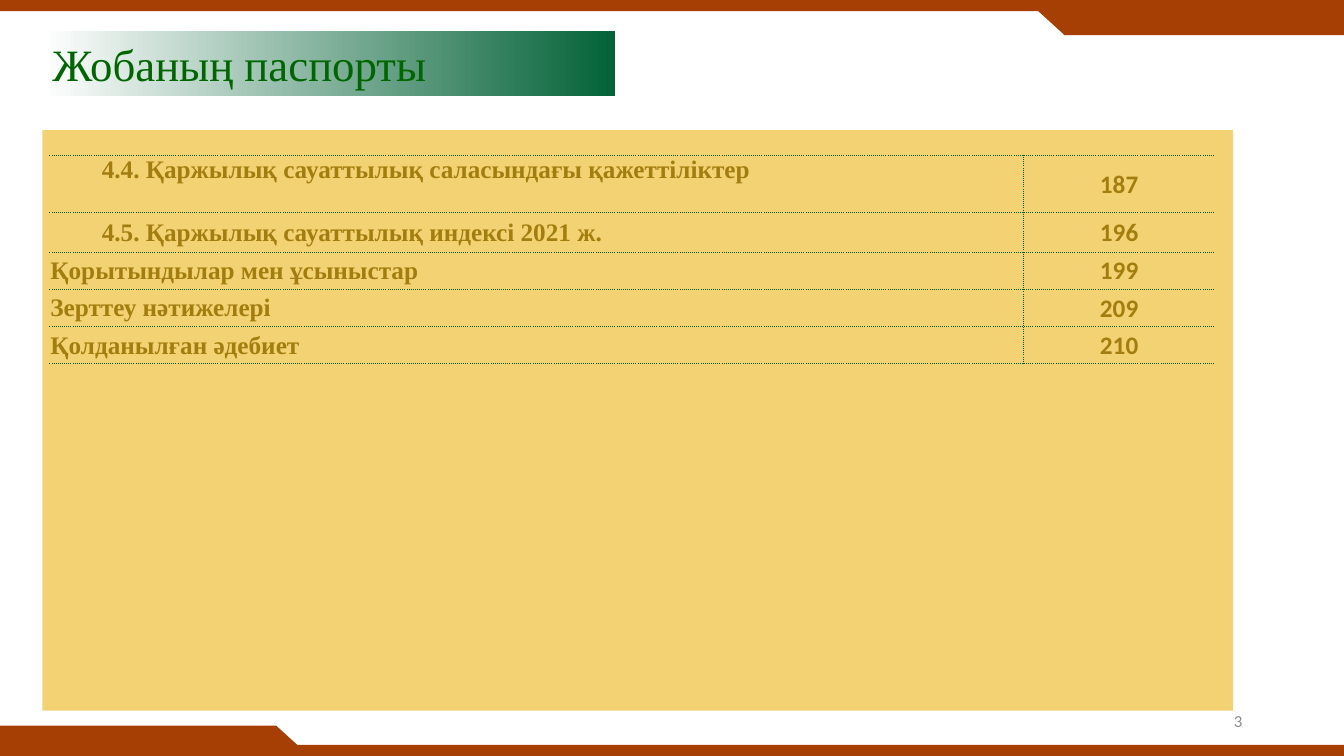
from typing import NamedTuple

from lxml import etree
from pptx import Presentation
from pptx import util as u
from pptx.dml import color
from pptx.enum import shapes, text
from pptx.oxml import ns

COLORS = {
    "rust": "A63F03",
    "sand": "F2D272",
    "ochre": "A37E0F",
    "pine": "036237",
    "rule": "026036",
    "title": "006600",
    "grey": "8C8C8C",
    "white": "FFFFFF",
}
SERIF, SANS = "Times New Roman", "Calibri"
RECT = shapes.MSO_SHAPE.RECTANGLE
MERGE = shapes.MSO_SHAPE.FLOWCHART_MERGE


class Block(NamedTuple):
    left: float
    top: float
    width: float
    height: float
    fill: str = "rust"
    kind: int = RECT
    rotation: int = 0


class Entry(NamedTuple):
    heading: str
    page: str
    height: float = 0.37
    indent: float = 0.01
    anchor: int = text.MSO_ANCHOR.MIDDLE


FRAME = [
    Block(0, 0, 13.33, 0.11),
    Block(0, 7.39, 13.33, 0.11),
    Block(10.55, 0.05, 2.78, 0.3),
    Block(10.22, 0.04, 0.66, 0.3, kind=MERGE),
    Block(-0.04, 7.2, 2.78, 0.3),
    Block(2.41, 7.2, 0.66, 0.3, kind=MERGE, rotation=180),
]
TITLE_BAND = Block(0.42, 0.31, 5.68, 0.64, fill="white")
PANEL = Block(0.42, 1.29, 11.81, 5.76, fill="sand")
ENTRIES = [
    Entry("4.4. Қаржылық сауаттылық саласындағы қажеттіліктер", "187",
          0.57, 0.52, text.MSO_ANCHOR.TOP),
    Entry("4.5. Қаржылық сауаттылық индексі 2021 ж.", "196", 0.39, 0.52),
    Entry("Қорытындылар мен ұсыныстар", "199"),
    Entry("Зерттеу нәтижелері", "209"),
    Entry("Қолданылған әдебиет", "210"),
]
COLUMN_WIDTHS = (9.66, 1.9)


def rgb(name: str) -> color.RGBColor:
    return color.RGBColor.from_string(COLORS[name])


def write(frame, words: str, *, size: float, font: str, ink: str,
          bold: bool = False, align: int = text.PP_ALIGN.LEFT) -> None:
    paragraph = frame.paragraphs[0]
    paragraph.alignment = align
    run = paragraph.add_run()
    run.text = words
    run.font.size = u.Pt(size)
    run.font.name = font
    run.font.bold = bold
    run.font.color.rgb = rgb(ink)


def draw_block(slide, block: Block):
    shape = slide.shapes.add_shape(
        block.kind, u.Inches(block.left), u.Inches(block.top),
        u.Inches(block.width), u.Inches(block.height))
    shape.shadow.inherit = False
    shape.rotation = block.rotation
    shape.fill.solid()
    shape.fill.fore_color.rgb = rgb(block.fill)
    shape.line.fill.background()
    return shape


def rule_cell(cell, dotted: str) -> None:
    """Dot the named sides (L, R, T, B) and clear the others."""
    properties = cell._tc.get_or_add_tcPr()
    for side in "LRTB":
        line = etree.SubElement(properties, ns.qn(f"a:ln{side}"), w=str(u.Pt(0.5)))
        if side in dotted:
            fill = etree.SubElement(line, ns.qn("a:solidFill"))
            etree.SubElement(fill, ns.qn("a:srgbClr"), val=COLORS["rule"])
            etree.SubElement(line, ns.qn("a:prstDash"), val="sysDot")
        else:
            etree.SubElement(line, ns.qn("a:noFill"))


def fill_cell(cell, words: str, dotted: str, *, indent: float, anchor: int,
              font: str, align: int) -> None:
    cell.margin_left = u.Inches(indent)
    cell.margin_right = cell.margin_top = u.Inches(0.01)
    cell.margin_bottom = 0
    cell.vertical_anchor = anchor
    rule_cell(cell, dotted)
    cell.fill.background()
    write(cell.text_frame, words, size=18, font=font, ink="ochre", bold=True, align=align)


def draw_contents(slide) -> None:
    contents = slide.shapes.add_table(
        len(ENTRIES), len(COLUMN_WIDTHS), u.Inches(0.49), u.Inches(1.54),
        u.Inches(sum(COLUMN_WIDTHS)),
        u.Inches(sum(entry.height for entry in ENTRIES))).table
    contents.first_row = contents.horz_banding = False
    for column, width in zip(contents.columns, COLUMN_WIDTHS):
        column.width = u.Inches(width)
    for index, entry in enumerate(ENTRIES):
        contents.rows[index].height = u.Inches(entry.height)
        fill_cell(contents.cell(index, 0), entry.heading, "RTB", indent=entry.indent,
                  anchor=entry.anchor, font=SERIF, align=text.PP_ALIGN.LEFT)
        fill_cell(contents.cell(index, 1), entry.page, "LTB", indent=0.01,
                  anchor=text.MSO_ANCHOR.MIDDLE, font=SANS, align=text.PP_ALIGN.CENTER)


def main() -> None:
    deck = Presentation()
    deck.slide_width, deck.slide_height = u.Inches(13.33), u.Inches(7.5)
    slide = deck.slides.add_slide(deck.slide_layouts[6])

    # Frame bars and corner tabs
    for block in FRAME:
        draw_block(slide, block)

    # Slide number
    number = slide.shapes.add_textbox(
        u.Inches(9.42), u.Inches(6.95), u.Inches(3), u.Inches(0.4)).text_frame
    number.word_wrap = True
    number.vertical_anchor = text.MSO_ANCHOR.MIDDLE
    write(number, "3", size=12, font=SANS, ink="grey", align=text.PP_ALIGN.RIGHT)

    # Title on a fading band
    title = draw_block(slide, TITLE_BAND)
    title.fill.gradient()
    title.fill.gradient_angle = 0
    for stop, name in zip(title.fill.gradient_stops, ("white", "pine")):
        stop.color.rgb = rgb(name)
    title.text_frame.vertical_anchor = text.MSO_ANCHOR.MIDDLE
    write(title.text_frame, "Жобаның паспорты", size=32, font=SERIF, ink="title")

    # Contents table on its panel
    draw_block(slide, PANEL)
    draw_contents(slide)

    deck.save("out.pptx")


if __name__ == "__main__":
    main()
